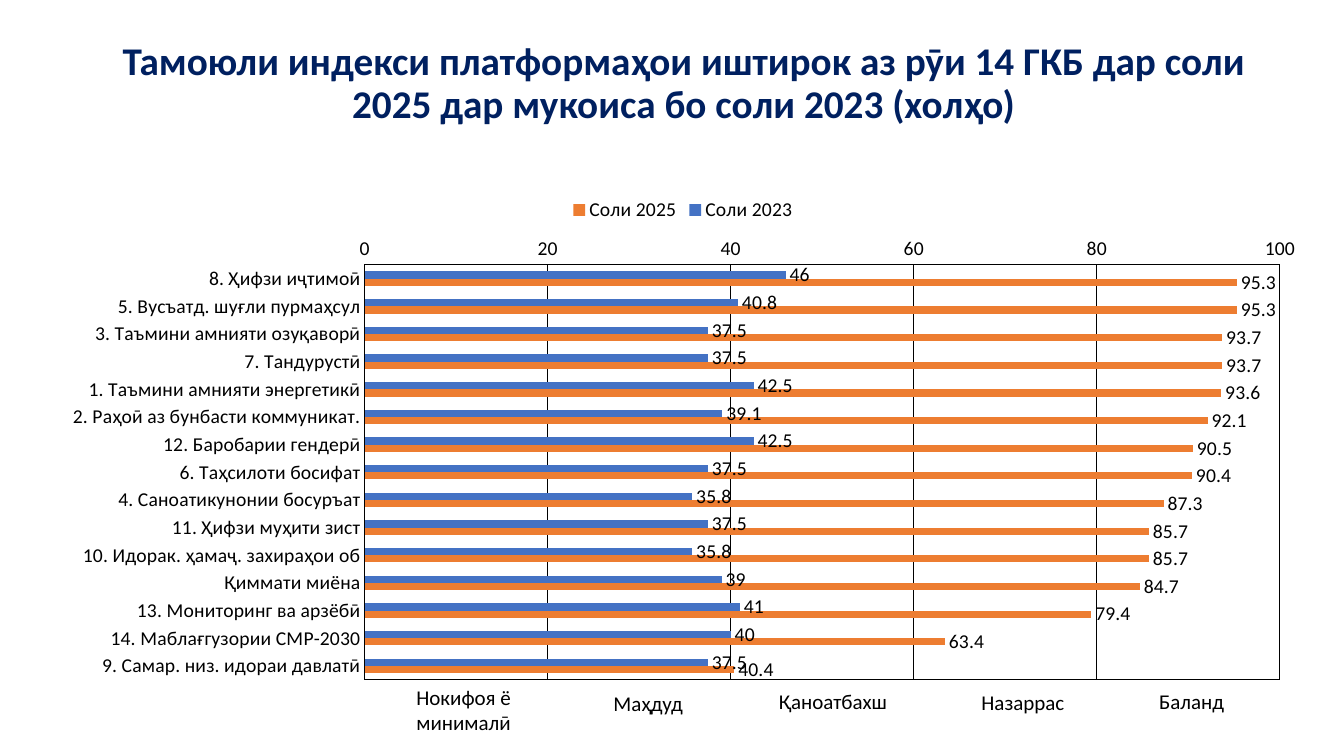
import pptx
import pptx.chart.data
import pptx.dml.color
import pptx.enum.chart
import pptx.enum.shapes
import pptx.enum.text
import pptx.oxml
import pptx.oxml.ns
import pptx.util
from pptx.util import Cm, Pt

NAVY = pptx.dml.color.RGBColor(0x00, 0x20, 0x60)
BLACK = pptx.dml.color.RGBColor(0x00, 0x00, 0x00)
WHITE = pptx.dml.color.RGBColor(0xFF, 0xFF, 0xFF)
BLUE = pptx.dml.color.RGBColor(0x44, 0x72, 0xC4)
ORANGE = pptx.dml.color.RGBColor(0xED, 0x7D, 0x31)

TITLE = "Тамоюли индекси платформаҳои иштирок аз рӯи 14 ГКБ дар соли 2025 дар мукоиса бо соли 2023 (холҳо)"
SCORES = [
    ("8. Ҳифзи иҷтимоӣ", 46, 95.3),
    ("5. Вусъатд. шуғли пурмаҳсул", 40.8, 95.3),
    ("3. Таъмини амнияти озуқаворӣ", 37.5, 93.7),
    ("7. Тандурустӣ", 37.5, 93.7),
    ("1. Таъмини амнияти энергетикӣ", 42.5, 93.6),
    ("2. Раҳоӣ аз бунбасти коммуникат.", 39.1, 92.1),
    ("12. Баробарии гендерӣ", 42.5, 90.5),
    ("6. Таҳсилоти босифат", 37.5, 90.4),
    ("4. Саноатикунонии босуръат", 35.8, 87.3),
    ("11. Ҳифзи муҳити зист", 37.5, 85.7),
    ("10. Идорак. ҳамаҷ. захираҳои об", 35.8, 85.7),
    ("Қиммати миёна", 39, 84.7),
    ("13. Мониторинг ва арзёбӣ", 41, 79.4),
    ("14. Маблағгузории СМР-2030", 40, 63.4),
    ("9. Самар. низ. идораи давлатӣ", 37.5, 40.4),
]
SERIES = [("Соли 2023", BLUE), ("Соли 2025", ORANGE)]
CENTER = pptx.enum.text.PP_ALIGN.CENTER
LEFT = pptx.enum.text.PP_ALIGN.LEFT
RATINGS = [
    ("Нокифоя ё минималӣ", (9.17, 17.37, 5.03, 1.04), CENTER),
    ("Маҳдуд", (14.33, 17.4, 4.01, 0.64), CENTER),
    ("Қаноатбахш", (18.34, 17.27, 5.31, 0.81), CENTER),
    ("Назаррас", (23.9, 17.2, 3.76, 0.97), CENTER),
    ("Баланд", (28.96, 17.17, 2.64, 0.97), LEFT),
]
PLOT_LAYOUT = {"x": 0.25, "y": 0.156, "w": 0.719, "h": 0.825}
TITLE_FONT = {"name": "Calibri", "size": Pt(28), "bold": True}
RATING_FONT = {"name": "Calibri", "size": Pt(15)}
CHART_FONT = {"name": "Calibri", "size": Pt(14)}
TICK_NONE = pptx.enum.chart.XL_TICK_MARK.NONE
CATEGORY_FORMAT = {
    "reverse_order": True,
    "major_tick_mark": TICK_NONE,
    "minor_tick_mark": TICK_NONE,
    "has_major_gridlines": False,
}
VALUE_FORMAT = {
    "minimum_scale": 0,
    "maximum_scale": 100,
    "major_unit": 20,
    "major_tick_mark": TICK_NONE,
    "minor_tick_mark": TICK_NONE,
    "has_major_gridlines": True,
}
LABEL_FORMAT = {
    "show_value": True,
    "position": pptx.enum.chart.XL_LABEL_POSITION.OUTSIDE_END,
    "number_format": "General",
    "number_format_is_linked": False,
}


def apply_format(target, values):
    for name, value in values.items():
        setattr(target, name, value)


def apply_font(font, values, color):
    apply_format(font, values)
    font.color.rgb = color


def black_line(line):
    line.color.rgb = BLACK
    line.width = Pt(0)


def add_title(slide):
    title = slide.shapes.title
    title.left, title.top, title.width, title.height = map(Cm, (2.62, 0.28, 29.21, 3.68))
    frame = title.text_frame
    frame.text = TITLE
    apply_format(frame, {
        "word_wrap": True,
        "auto_size": pptx.enum.text.MSO_AUTO_SIZE.NONE,
        "vertical_anchor": pptx.enum.text.MSO_ANCHOR.MIDDLE,
    })
    paragraph = frame.paragraphs[0]
    apply_format(paragraph, {"alignment": CENTER, "line_spacing": 0.9})
    apply_font(paragraph.runs[0].font, TITLE_FONT, NAVY)


def add_rating(slide, text, box, alignment):
    shape = slide.shapes.add_shape(pptx.enum.shapes.MSO_SHAPE.RECTANGLE, *map(Cm, box))
    shape.shadow.inherit = False
    shape.fill.solid()
    shape.fill.fore_color.rgb = WHITE
    shape.line.fill.background()
    frame = shape.text_frame
    frame.text = text
    frame.word_wrap = True
    frame.vertical_anchor = pptx.enum.text.MSO_ANCHOR.MIDDLE
    paragraph = frame.paragraphs[0]
    paragraph.alignment = alignment
    apply_font(paragraph.runs[0].font, RATING_FONT, BLACK)


def frame_plot_area(chart):
    plot_area = chart.plots[0]._element.getparent()
    for layout in plot_area.findall(pptx.oxml.ns.qn("c:layout")):
        plot_area.remove(layout)
    modes = "".join(f'<c:{key}Mode val="edge"/>' for key in "xy")
    sizes = "".join(f'<c:{key} val="{value}"/>' for key, value in PLOT_LAYOUT.items())
    plot_area.insert(0, pptx.oxml.parse_xml(
        f'<c:layout {pptx.oxml.ns.nsdecls("c")}><c:manualLayout>'
        f'<c:layoutTarget val="inner"/>{modes}{sizes}</c:manualLayout></c:layout>'))
    plot_area.append(pptx.oxml.parse_xml(
        f'<c:spPr {pptx.oxml.ns.nsdecls("c", "a")}><a:noFill/><a:ln w="0"><a:solidFill>'
        f'<a:srgbClr val="{BLACK}"/></a:solidFill></a:ln></c:spPr>'))


def add_score_chart(slide):
    categories, *columns = zip(*SCORES)
    data = pptx.chart.data.CategoryChartData()
    data.categories = categories
    for (name, _), values in zip(SERIES, columns):
        data.add_series(name, values)
    chart = slide.shapes.add_chart(
        pptx.enum.chart.XL_CHART_TYPE.BAR_CLUSTERED,
        *map(Cm, (1.17, 4.7, 32.08, 12.67)), data).chart
    apply_font(chart.font, CHART_FONT, BLACK)
    apply_format(chart, {"has_title": False, "has_legend": True})
    apply_format(chart.legend, {
        "position": pptx.enum.chart.XL_LEGEND_POSITION.TOP,
        "include_in_layout": False,
    })
    apply_font(chart.legend.font, CHART_FONT, BLACK)
    for axis, values in ((chart.category_axis, CATEGORY_FORMAT), (chart.value_axis, VALUE_FORMAT)):
        apply_format(axis, values)
        apply_font(axis.tick_labels.font, CHART_FONT, BLACK)
    black_line(chart.category_axis.format.line)
    black_line(chart.value_axis.major_gridlines.format.line)
    chart.value_axis.format.line.fill.background()
    plot = chart.plots[0]
    apply_format(plot, {"gap_width": 182, "overlap": 0, "vary_by_categories": False})
    for series, (_, color) in zip(plot.series, SERIES):
        series.format.fill.solid()
        series.format.fill.fore_color.rgb = color
        apply_format(series.data_labels, LABEL_FORMAT)
        apply_font(series.data_labels.font, CHART_FONT, BLACK)
    frame_plot_area(chart)


def main():
    presentation = pptx.Presentation()
    presentation.slide_width = Cm(33.87)
    presentation.slide_height = Cm(19.05)
    slide = presentation.slides.add_slide(presentation.slide_layouts[5])
    add_title(slide)
    for rating in RATINGS:
        add_rating(slide, *rating)
    add_score_chart(slide)
    presentation.save("out.pptx")


if __name__ == "__main__":
    main()
